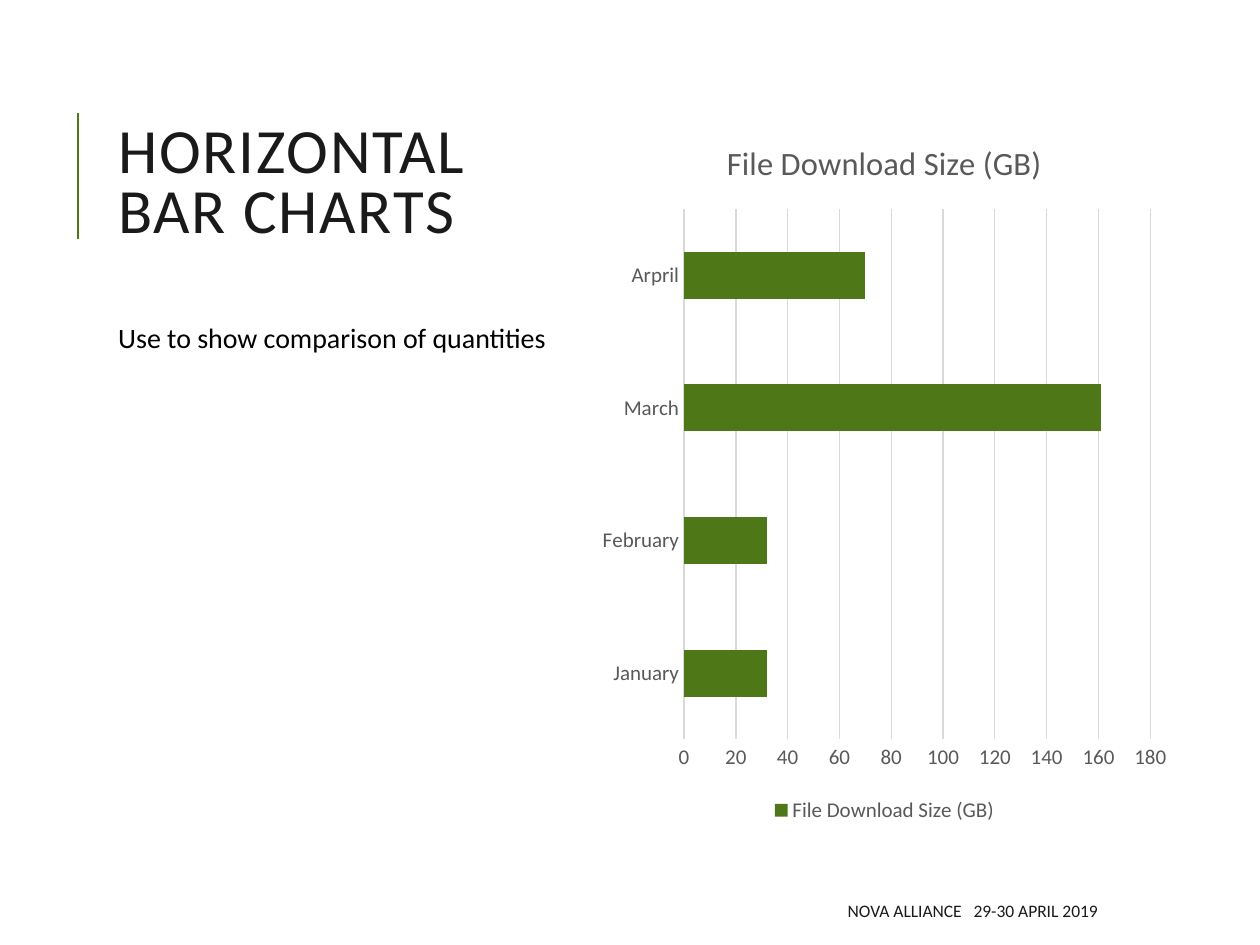
import pptx
import pptx.chart.data
import pptx.dml.color
import pptx.enum.chart
import pptx.enum.shapes
import pptx.enum.text
import pptx.oxml
import pptx.util
from pptx.util import Inches

C = {"green": "4E7817", "ink": "1A1A1A", "black": "000000",
     "gray": "595959", "grid": "D9D9D9"}
FONT = "Calibri"
ALIGN = pptx.enum.text.PP_ALIGN
ANCHOR = pptx.enum.text.MSO_ANCHOR


def rgb(name):
    return pptx.dml.color.RGBColor.from_string(C[name])


def put_text(tf, text, size, color, align=ALIGN.LEFT, anchor=ANCHOR.TOP,
             line=1.0, before=0, after=0, tracking=None):
    tf.word_wrap = True
    tf.auto_size = pptx.enum.text.MSO_AUTO_SIZE.NONE
    tf.vertical_anchor = anchor
    p = tf.paragraphs[0]
    p.alignment, p.line_spacing = align, line
    p.space_before, p.space_after = pptx.util.Pt(before), pptx.util.Pt(after)
    r = p.add_run()
    r.text = text
    r.font.name, r.font.size = FONT, pptx.util.Pt(size)
    r.font.color.rgb = rgb(color)
    if tracking:
        r.font._element.set("spc", str(tracking * 100))


prs = pptx.Presentation()
prs.slide_width, prs.slide_height = Inches(10), Inches(7.5)
s = prs.slides.add_slide(prs.slide_layouts[5])

# Accent rule beside the title
rule = s.shapes.add_connector(pptx.enum.shapes.MSO_CONNECTOR.STRAIGHT,
                              Inches(0.62), Inches(1.9), Inches(0.62), Inches(0.9))
rule.line.color.rgb = rgb("green")
rule.line.width = pptx.util.Pt(1.5)
rule._element.spPr.append(pptx.oxml.parse_xml(
    '<a:effectLst xmlns:a="http://schemas.openxmlformats.org/drawingml/2006/main"/>'))

# Title
title = s.shapes.title
title.left, title.top = Inches(0.84), Inches(0.52)
title.width, title.height = Inches(3.6), Inches(1.9)
put_text(title.text_frame, "HORIZONTAL BAR CHARTS", 36, "ink",
         anchor=ANCHOR.MIDDLE, line=0.8, tracking=1)

# Body and footer
body = s.shapes.add_textbox(Inches(0.84), Inches(2.47), Inches(3.6), Inches(4.11))
put_text(body.text_frame, "Use to show comparison of quantities", 16, "black",
         line=1.08, before=6, after=2)
footer = s.shapes.add_textbox(Inches(3.97), Inches(7.08), Inches(4.84), Inches(0.3))
put_text(footer.text_frame, "NOVA ALLIANCE   29-30 APRIL 2019", 10, "ink",
         align=ALIGN.RIGHT, anchor=ANCHOR.MIDDLE)

# Bar chart
name = "File Download Size (GB)"
data = pptx.chart.data.CategoryChartData()
data.categories = ["January", "February", "March", "Arpril"]
data.add_series(name, [32, 32, 161, 70])
chart = s.shapes.add_chart(pptx.enum.chart.XL_CHART_TYPE.BAR_CLUSTERED,
                           Inches(4.69), Inches(0.9), Inches(4.66), Inches(5.67),
                           data).chart
chart.font.name, chart.font.size = FONT, pptx.util.Pt(10)
chart.has_title = True
r = chart.chart_title.text_frame.paragraphs[0].add_run()
r.text = name
r.font.bold = False
chart.has_legend = True
chart.legend.position = pptx.enum.chart.XL_LEGEND_POSITION.BOTTOM
chart.legend.include_in_layout = False

plot = chart.plots[0]
plot.gap_width = 182
plot.vary_by_categories = False
fill = plot.series[0].format.fill
fill.solid()
fill.fore_color.rgb = rgb("green")

# Axes
cat, val = chart.category_axis, chart.value_axis
for axis in (cat, val):
    axis.major_tick_mark = axis.minor_tick_mark = pptx.enum.chart.XL_TICK_MARK.NONE
val.minimum_scale, val.maximum_scale, val.major_unit = 0, 180, 20
val.format.line.fill.background()
val.has_major_gridlines = True
for line in (cat.format.line, val.major_gridlines.format.line):
    line.color.rgb = rgb("grid")
    line.width = pptx.util.Pt(0.75)

# Chart lettering
for font, size in ((r.font, 18.6), (chart.legend.font, 12),
                   (cat.tick_labels.font, 12), (val.tick_labels.font, 12)):
    font.name, font.size = FONT, pptx.util.Pt(size)
    font.color.rgb = rgb("gray")

prs.save("out.pptx")
